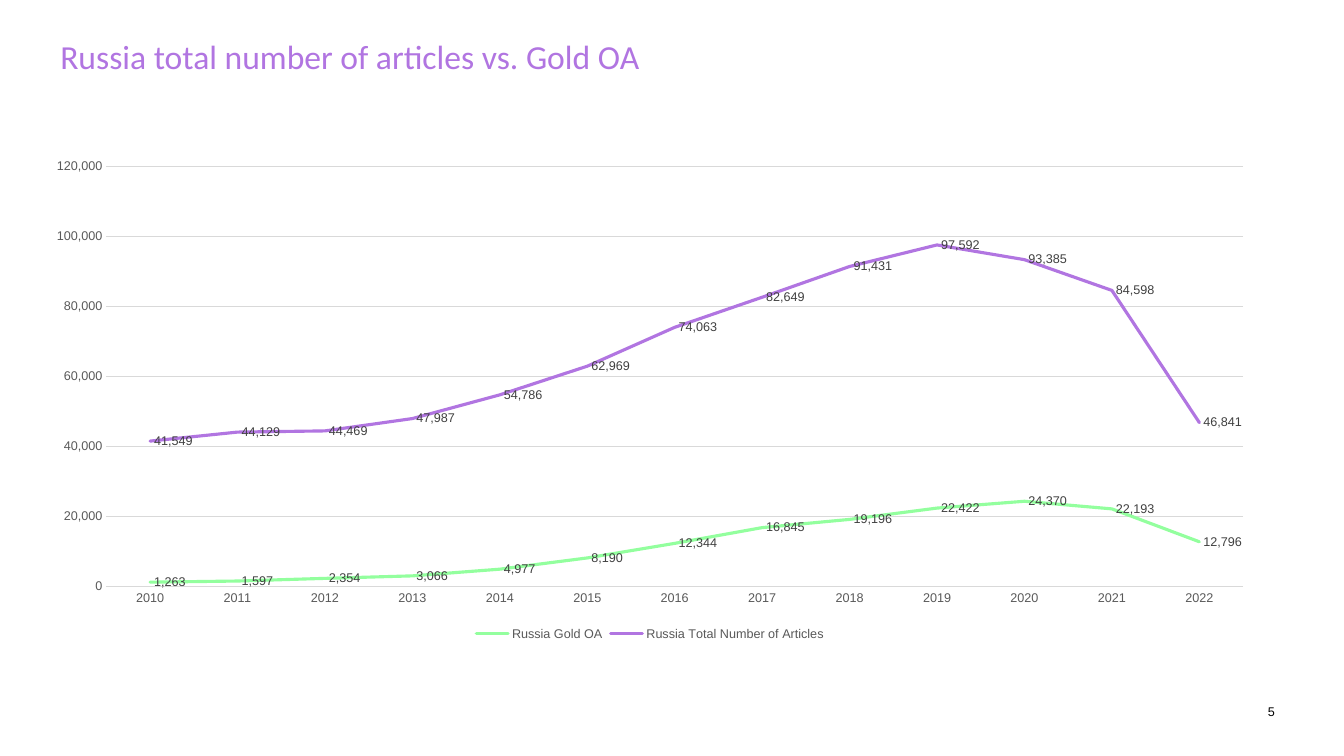
from dataclasses import dataclass

from lxml.etree import SubElement
from pptx import Presentation
from pptx.chart.data import CategoryChartData
from pptx.dml.color import RGBColor
from pptx.enum.chart import (XL_CHART_TYPE, XL_LABEL_POSITION, XL_LEGEND_POSITION,
                             XL_MARKER_STYLE, XL_TICK_MARK)
from pptx.enum.text import MSO_ANCHOR
from pptx.oxml.ns import qn
from pptx.util import Cm, Pt


@dataclass(frozen=True)
class Theme:
    purple: str = "B175E1"
    green: str = "93FF9E"
    black: str = "000000"
    label: str = "404040"
    axis: str = "595959"
    grid: str = "D9D9D9"
    heading_font: str = "Calibri"
    body_font: str = "Arial"
    title_size: float = 24
    chart_size: float = 10
    small_size: float = 9
    series_width: float = 2.25
    grid_width: float = 0.75


@dataclass(frozen=True)
class TextItem:
    text: str
    box: tuple[float, float, float, float]
    font: str
    size: float
    color: str
    anchor: MSO_ANCHOR
    spacing: float = 1.0


@dataclass(frozen=True)
class LineSeries:
    name: str
    color: str
    values: tuple[int, ...]


THEME = Theme()
NUMBER_FORMAT = "#,##0"
YEARS = [str(year) for year in range(2010, 2023)]
CHART_BOX = (0.81, 3.76, 31.14, 12.5)

TEXTS = [
    TextItem("Russia total number of articles vs. Gold OA", (1.52, 1.02, 23.01, 0.71),
             THEME.heading_font, THEME.title_size, THEME.purple, MSO_ANCHOR.TOP, 0.9),
    TextItem("5", (31.95, 17.63, 0.61, 0.61),
             THEME.body_font, THEME.small_size, THEME.black, MSO_ANCHOR.MIDDLE),
]

SERIES = [
    LineSeries("Russia Gold OA", THEME.green,
               (1263, 1597, 2354, 3066, 4977, 8190, 12344, 16845, 19196,
                22422, 24370, 22193, 12796)),
    LineSeries("Russia Total Number of Articles", THEME.purple,
               (41549, 44129, 44469, 47987, 54786, 62969, 74063, 82649, 91431,
                97592, 93385, 84598, 46841)),
]


def set_font(font, name: str, size: float, color: str) -> None:
    for key, value in {"name": name, "size": Pt(size), "bold": False}.items():
        setattr(font, key, value)
    font.color.rgb = RGBColor.from_string(color)


def set_line(line, color: str, width: float) -> None:
    line.color.rgb = RGBColor.from_string(color)
    line.width = Pt(width)


def add_text(s, item: TextItem) -> None:
    tf = s.shapes.add_textbox(*map(Cm, item.box)).text_frame
    frame = {"margin_left": 0, "margin_top": 0, "margin_right": 0, "margin_bottom": 0,
             "word_wrap": True, "vertical_anchor": item.anchor}
    for key, value in frame.items():
        setattr(tf, key, value)
    p = tf.paragraphs[0]
    p.line_spacing = item.spacing
    r = p.add_run()
    r.text = item.text
    set_font(r.font, item.font, item.size, item.color)


def style_axes(chart) -> None:
    for axis in (chart.category_axis, chart.value_axis):
        axis.major_tick_mark = axis.minor_tick_mark = XL_TICK_MARK.NONE
        set_font(axis.tick_labels.font, THEME.body_font, THEME.small_size, THEME.axis)
    set_line(chart.category_axis.format.line, THEME.grid, THEME.grid_width)
    value_axis = chart.value_axis
    value_axis.format.line.fill.background()
    set_line(value_axis.major_gridlines.format.line, THEME.grid, THEME.grid_width)
    value_axis.tick_labels.number_format = NUMBER_FORMAT
    value_axis.tick_labels.number_format_is_linked = False


def style_series(plot_series, item: LineSeries) -> None:
    plot_series.smooth = False
    plot_series.marker.style = XL_MARKER_STYLE.NONE
    set_line(plot_series.format.line, item.color, THEME.series_width)
    # Round line ends
    plot_series.format.line.fill.solid()
    plot_series.format.line.color.rgb = RGBColor.from_string(item.color)
    ln = plot_series.format.line._get_or_add_ln()
    ln.set("cap", "rnd")
    SubElement(ln, qn("a:round"))
    # Value labels
    labels = plot_series.data_labels
    settings = {"show_value": True, "number_format": NUMBER_FORMAT,
                "number_format_is_linked": False, "position": XL_LABEL_POSITION.RIGHT}
    for key, value in settings.items():
        setattr(labels, key, value)
    set_font(labels.font, THEME.body_font, THEME.small_size, THEME.label)


def add_line_chart(s, items: list[LineSeries]) -> None:
    data = CategoryChartData(number_format=NUMBER_FORMAT)
    data.categories = YEARS
    for item in items:
        data.add_series(item.name, item.values)
    chart = s.shapes.add_chart(XL_CHART_TYPE.LINE, *map(Cm, CHART_BOX), data).chart
    set_font(chart.font, THEME.body_font, THEME.chart_size, THEME.black)
    chart.has_title = False
    chart.has_legend = True
    chart.legend.position = XL_LEGEND_POSITION.BOTTOM
    chart.legend.include_in_layout = False
    set_font(chart.legend.font, THEME.body_font, THEME.small_size, THEME.axis)
    style_axes(chart)
    plot = chart.plots[0]
    plot.vary_by_categories = False
    for plot_series, item in zip(plot.series, items):
        style_series(plot_series, item)


def main() -> None:
    prs = Presentation()
    prs.slide_width, prs.slide_height = Cm(33.87), Cm(19.05)
    s = prs.slides.add_slide(prs.slide_layouts[6])

    # Title and page number
    for item in TEXTS:
        add_text(s, item)

    # Articles by year
    add_line_chart(s, SERIES)
    prs.save("out.pptx")


if __name__ == "__main__":
    main()
